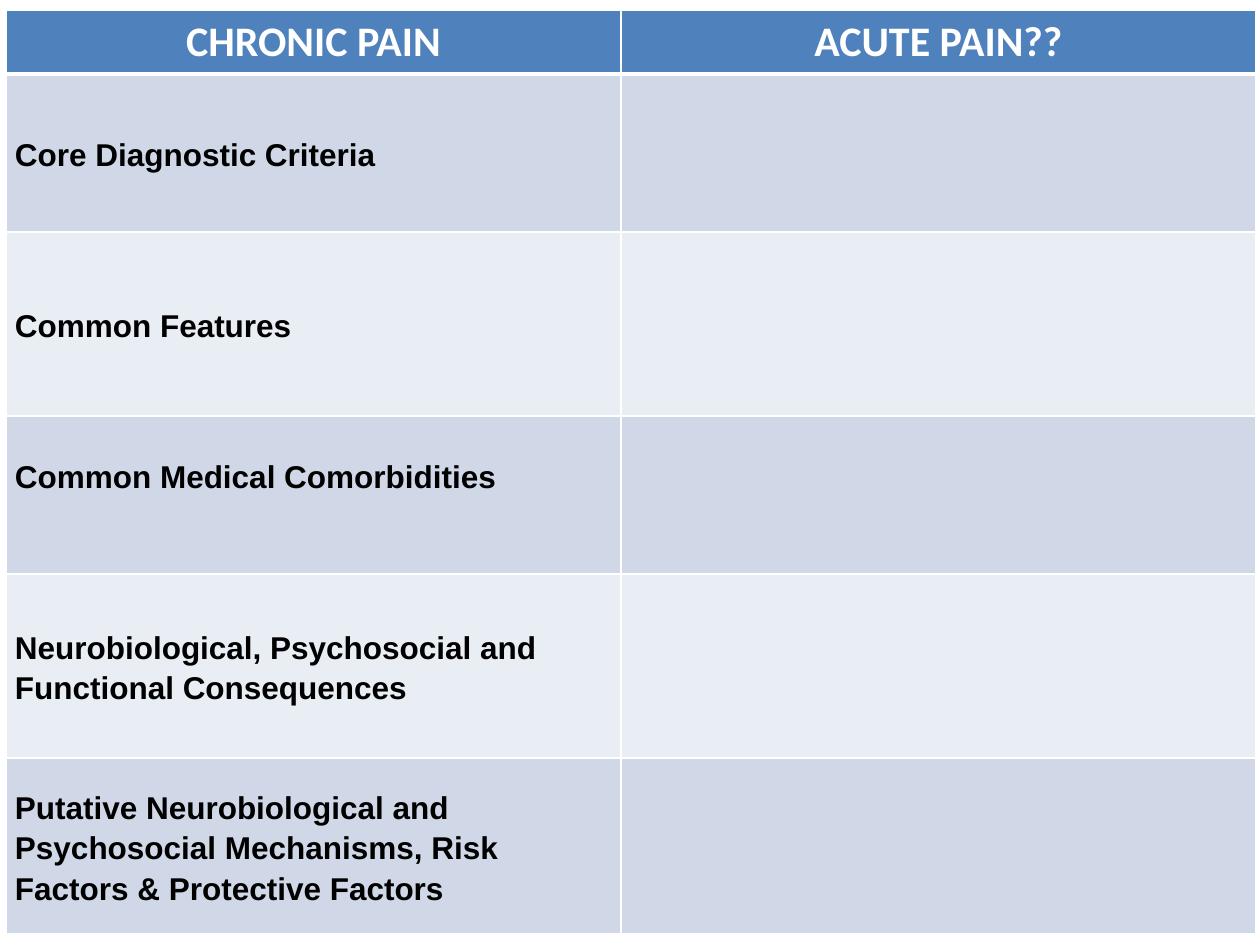
from dataclasses import dataclass

from lxml import etree
from pptx import Presentation
from pptx.dml.color import RGBColor
from pptx.enum import text
from pptx.oxml import ns
from pptx.util import Emu, Pt

PX_PER_INCH = 126
SLIDE_SIZE = (1260, 945)
TABLE_ORIGIN = (6, 10)
COLUMN_WIDTHS = (615, 635)
ROW_HEIGHTS = (64, 158, 184, 158, 184, 176)

HEADINGS = ("CHRONIC PAIN", "ACUTE PAIN??")
# Each dimension with the space kept free below its text
DIMENSIONS = (
    ("Core Diagnostic Criteria", 0),
    ("Common Features", 0),
    ("Common Medical Comorbidities", 40),
    ("Neurobiological, Psychosocial and Functional Consequences", 0),
    ("Putative Neurobiological and Psychosocial Mechanisms, "
     "Risk Factors & Protective Factors", 0),
)


@dataclass(frozen=True)
class Theme:
    header_fill: str = "4F81BD"
    bands: tuple = ("D0D8E8", "E9EDF4")
    rule: str = "FFFFFF"
    thin: int = 1
    thick: int = 3
    heading: tuple = ("Calibri", 24, "FFFFFF")
    body: tuple = ("Arial", 18, "000000")


THEME = Theme()


def px(length):
    return Emu(round(length * 914400 / PX_PER_INCH))


def set_attributes(target, values):
    for name, value in values.items():
        setattr(target, name, value)


def add_borders(cell, top, bottom):
    """Draw the four rules of a cell; must come before its fill."""
    properties = cell._tc.get_or_add_tcPr()
    widths = {"L": THEME.thin, "R": THEME.thin, "T": top, "B": bottom}
    for side, width in widths.items():
        line = etree.SubElement(properties, ns.qn(f"a:ln{side}"), w=str(Pt(width)))
        fill = etree.SubElement(line, ns.qn("a:solidFill"))
        etree.SubElement(fill, ns.qn("a:srgbClr"), val=THEME.rule)


def paint_cell(cell, color, top=THEME.thin, bottom=THEME.thin):
    add_borders(cell, top, bottom)
    cell.fill.solid()
    cell.fill.fore_color.rgb = RGBColor.from_string(color)


def write_cell(cell, words, style, paragraph_format):
    font_name, size, color = style
    paragraph = cell.text_frame.paragraphs[0]
    set_attributes(paragraph, paragraph_format)
    run = paragraph.add_run()
    run.text = words
    set_attributes(run.font, {"name": font_name, "size": Pt(size), "bold": True})
    run.font.color.rgb = RGBColor.from_string(color)


def add_comparison_table(slide):
    frame = slide.shapes.add_table(
        len(ROW_HEIGHTS), len(COLUMN_WIDTHS), *map(px, TABLE_ORIGIN),
        px(sum(COLUMN_WIDTHS)), px(sum(ROW_HEIGHTS)))
    table = frame.table
    for column, width in zip(table.columns, COLUMN_WIDTHS):
        column.width = px(width)
    for row, height in zip(table.rows, ROW_HEIGHTS):
        row.height = px(height)
    return table


def fill_header(table):
    for column, heading in enumerate(HEADINGS):
        cell = table.cell(0, column)
        paint_cell(cell, THEME.header_fill, bottom=THEME.thick)
        write_cell(cell, heading, THEME.heading,
                   {"alignment": text.PP_ALIGN.CENTER})


def fill_dimensions(table):
    for row, (dimension, space_below) in enumerate(DIMENSIONS, start=1):
        band = THEME.bands[(row - 1) % len(THEME.bands)]
        top = THEME.thick if row == 1 else THEME.thin
        for column in range(len(COLUMN_WIDTHS)):
            paint_cell(table.cell(row, column), band, top=top)
        label = table.cell(row, 0)
        set_attributes(label, {
            "vertical_anchor": text.MSO_ANCHOR.MIDDLE,
            "margin_left": px(9), "margin_right": px(9),
            "margin_top": 0, "margin_bottom": px(space_below)})
        write_cell(label, dimension, THEME.body, {"line_spacing": 1.15})


def main():
    presentation = Presentation()
    width, height = map(px, SLIDE_SIZE)
    set_attributes(presentation, {"slide_width": width, "slide_height": height})
    # Blank layout: the table fills the slide
    slide = presentation.slides.add_slide(presentation.slide_layouts[6])
    table = add_comparison_table(slide)
    fill_header(table)
    fill_dimensions(table)
    presentation.save("out.pptx")


if __name__ == "__main__":
    main()
